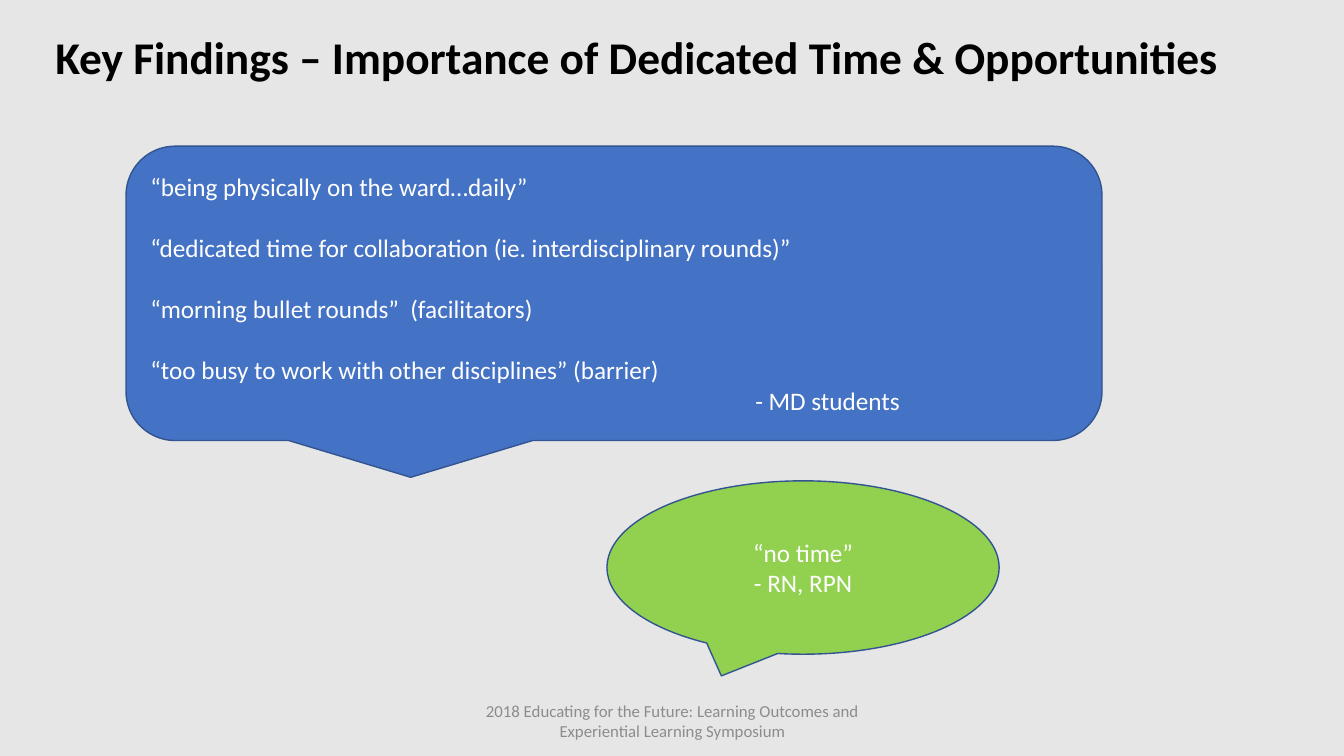
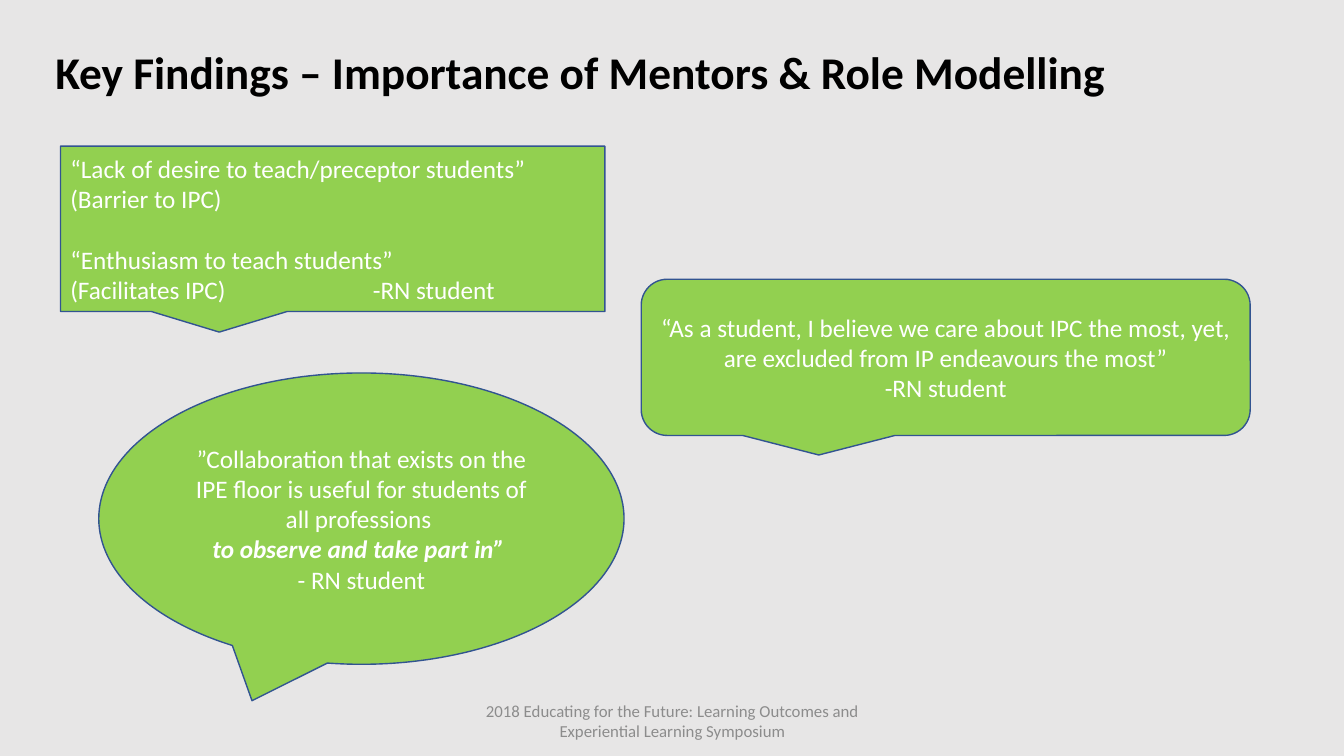
from dataclasses import dataclass

from lxml.etree import SubElement
from pptx import Presentation
from pptx.dml.color import RGBColor
from pptx.enum.shapes import MSO_SHAPE
from pptx.enum.text import MSO_ANCHOR, PP_ALIGN
from pptx.oxml.ns import qn
from pptx.util import Inches, Pt


@dataclass(frozen=True)
class Theme:
    back: str = "E7E6E6"
    ink: str = "000000"
    muted: str = "8C8C8C"
    white: str = "FFFFFF"
    blue: str = "4472C4"
    green: str = "92D050"
    edge: str = "325491"
    font: str = "Calibri"
    title: float = 32.4
    body: float = 18
    foot: float = 12
    gap: float = 22  # one line of body text


THEME = Theme()
FOOTER = ("2018 Educating for the Future: Learning Outcomes and "
          "Experiential Learning Symposium")


def color(code):
    return RGBColor.from_string(code)


def style(item, values):
    for name, value in values.items():
        setattr(item, name, value)


def add_stop(para, inches):
    """Give the paragraph one left tab stop."""
    stops = SubElement(para._p.get_or_add_pPr(), qn("a:tabLst"))
    SubElement(stops, qn("a:tab"), pos=str(Inches(inches)), algn="l")


def write(shape, lines, size, ink, align=PP_ALIGN.LEFT):
    """Fill a shape; each line is its text and a dict of bold, italic, gap, stop."""
    frame = shape.text_frame
    style(frame, {"word_wrap": True, "vertical_anchor": MSO_ANCHOR.MIDDLE})
    for index, (text, extra) in enumerate(lines):
        para = frame.add_paragraph() if index else frame.paragraphs[0]
        para.alignment = align
        if extra.get("gap"):
            para.space_before = Pt(THEME.gap)
        if "stop" in extra:
            add_stop(para, extra["stop"])
        run = para.add_run()
        run.text = text
        style(run.font, {"name": THEME.font, "size": Pt(size),
                         "bold": extra.get("bold", False),
                         "italic": extra.get("italic", False)})
        run.font.color.rgb = color(ink)


def add_label(slide, box, text, size, ink, align=PP_ALIGN.LEFT, **extra):
    label = slide.shapes.add_textbox(*map(Inches, box))
    write(label, [(text, extra)], size, ink, align)


def add_quote(slide, kind, box, fill, lines, align=PP_ALIGN.CENTER):
    quote = slide.shapes.add_shape(kind, *map(Inches, box))
    quote.shadow.inherit = False
    quote.fill.solid()
    quote.fill.fore_color.rgb = color(fill)
    quote.line.color.rgb = color(THEME.edge)
    quote.line.width = Pt(1)
    write(quote, lines, THEME.body, THEME.white, align)


def add_page(deck, title, top):
    slide = deck.slides.add_slide(deck.slide_layouts[6])
    slide.background.fill.solid()
    slide.background.fill.fore_color.rgb = color(THEME.back)
    add_label(slide, (0.45, top, 12, 0.6), title, THEME.title, THEME.ink, bold=True)
    add_label(slide, (4.42, 6.95, 4.5, 0.4), FOOTER, THEME.foot, THEME.muted,
              PP_ALIGN.CENTER)
    return slide


def build_time(deck):
    slide = add_page(
        deck, "Key Findings – Importance of Dedicated Time & Opportunities", 0.26)
    add_quote(slide, MSO_SHAPE.ROUNDED_RECTANGULAR_CALLOUT, (1.25, 1.45, 9.68, 2.92),
              THEME.blue, [
                  ("“being physically on the ward…daily”", {}),
                  ("“dedicated time for collaboration (ie. interdisciplinary rounds)”",
                   {"gap": True}),
                  ("“morning bullet rounds”  (facilitators)", {"gap": True}),
                  ("“too busy to work with other disciplines” (barrier)", {"gap": True}),
                  ("\t- MD students", {"stop": 6}),
              ], PP_ALIGN.LEFT)
    add_quote(slide, MSO_SHAPE.OVAL_CALLOUT, (6.02, 4.77, 3.89, 1.72), THEME.green,
              [("“no time”", {}), ("- RN, RPN", {})])


def build_mentors(deck):
    slide = add_page(
        deck, "Key Findings – Importance of Mentors & Role Modelling", 0.41)
    add_quote(slide, MSO_SHAPE.ROUNDED_RECTANGULAR_CALLOUT, (6.36, 2.77, 6.04, 1.55),
              THEME.green, [
                  ("“As a student, I believe we care about IPC the most, yet, "
                   "are excluded from IP endeavours the most”", {}),
                  ("-RN student", {}),
              ])
    add_quote(slide, MSO_SHAPE.RECTANGULAR_CALLOUT, (0.6, 1.45, 5.4, 1.64),
              THEME.green, [
                  ("“Lack of desire to teach/preceptor students”", {}),
                  ("(Barrier to IPC)", {}),
                  ("“Enthusiasm to teach students”", {"gap": True}),
                  ("(Facilitates IPC)\t-RN student", {"stop": 3}),
              ], PP_ALIGN.LEFT)
    add_quote(slide, MSO_SHAPE.OVAL_CALLOUT, (0.98, 3.7, 5.21, 2.89), THEME.green, [
        ("”Collaboration that exists on the IPE floor is useful for students of "
         "all professions ", {}),
        ("to observe and take part in” ", {"bold": True, "italic": True}),
        ("- RN student", {}),
    ])


def main():
    deck = Presentation()
    style(deck, {"slide_width": Inches(13.33), "slide_height": Inches(7.5)})
    build_time(deck)
    build_mentors(deck)
    deck.save("out.pptx")


if __name__ == "__main__":
    main()
